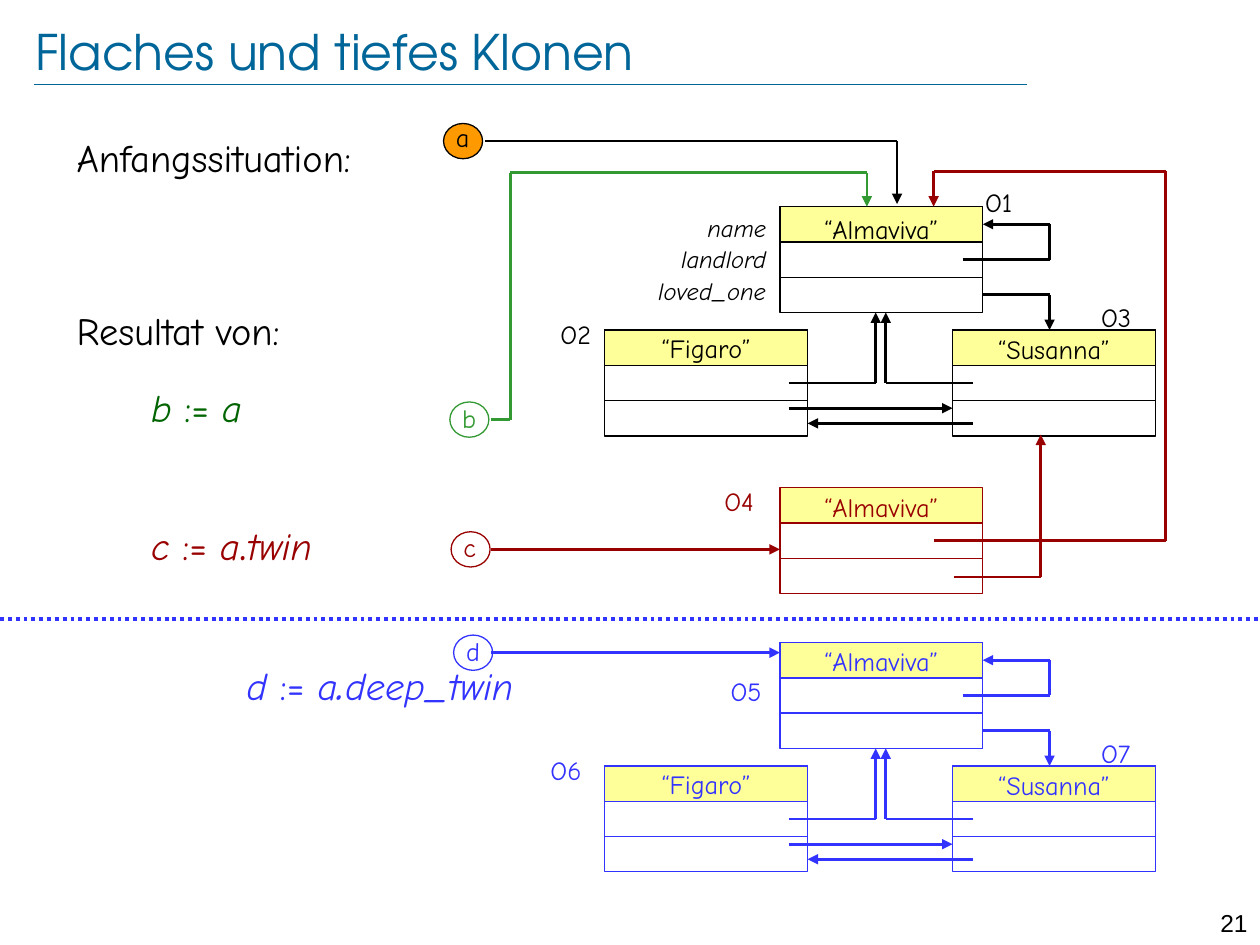
from dataclasses import dataclass
from itertools import pairwise

from lxml import etree
from pptx import Presentation
from pptx import util as u
from pptx.dml.color import RGBColor
from pptx.enum import dml, shapes, text
from pptx.oxml import ns


@dataclass(frozen=True)
class Theme:
    """Hold the colours, fonts and sizes of the slide."""
    black: str = "000000"
    blue: str = "3333FF"
    red: str = "990000"
    green: str = "339933"
    leaf: str = "006400"
    moss: str = "006600"
    teal: str = "006699"
    cream: str = "FFFF99"
    orange: str = "FF9900"
    hand: str = "Comic Neue"
    head: str = "TeX Gyre Adventor"
    plain: str = "Arial"
    title: int = 28
    body: int = 22
    dot: int = 28
    wide: int = 32
    label: int = 15
    small: int = 14
    thin: float = 0.75
    bold: float = 1.5


T = Theme()
ALIGN = text.PP_ALIGN


def style(run, color, size, font=T.hand, italic=False):
    """Set the font of one run."""
    run.font.name = font
    run.font.size = u.Pt(size)
    run.font.italic = italic
    run.font.color.rgb = RGBColor.from_string(color)


def frame(slide, x, y, w, h):
    """Add a wrapping text box and return its text frame."""
    box = slide.shapes.add_textbox(*map(u.Inches, (x, y, w, h)))
    box.text_frame.word_wrap = True
    return box.text_frame


def label(slide, words, x, y, w, color, size=T.label, align=ALIGN.LEFT,
          italic=False, font=T.hand):
    """Add a one-line text."""
    tf = frame(slide, x, y, w, 0.35)
    tf.text = words
    tf.paragraphs[0].alignment = align
    style(tf.paragraphs[0].runs[0], color, size, font, italic)
    return tf


def shape(slide, kind, x, y, w, h, fill=None, color=None):
    """Add a preset shape with an optional fill and outline."""
    item = slide.shapes.add_shape(kind, *map(u.Inches, (x, y, w, h)))
    item.shadow.inherit = False
    if fill:
        item.fill.solid()
        item.fill.fore_color.rgb = RGBColor.from_string(fill)
    else:
        item.fill.background()
    if color:
        item.line.color.rgb = RGBColor.from_string(color)
        item.line.width = u.Pt(T.thin)
    else:
        item.line.fill.background()


def line(slide, start, end, color, width=T.thin, arrow=False):
    """Add a straight line, with an arrowhead at its end if asked."""
    item = slide.shapes.add_connector(
        shapes.MSO_CONNECTOR.STRAIGHT, *map(u.Inches, (*start, *end)))
    item.line.color.rgb = RGBColor.from_string(color)
    item.line.width = u.Pt(width)
    if arrow:
        etree.SubElement(item.line._get_or_add_ln(), ns.qn("a:tailEnd"), type="triangle")
    etree.SubElement(item._element.spPr, ns.qn("a:effectLst"))
    return item


def wire(slide, color, *points, last=T.bold):
    """Join points by lines and end in an arrow."""
    legs = list(pairwise(points))
    for start, end in legs[:-1]:
        line(slide, start, end, color, T.bold)
    line(slide, *legs[-1], color, last, True)


def card(slide, name, x, y, color, lift=0.03, rim=True):
    """Draw an object with a name row and two fields."""
    w, row = 1.61, 0.28
    rect = shapes.MSO_SHAPE.RECTANGLE
    shape(slide, rect, x, y, w, row, T.cream, color if rim else None)
    shape(slide, rect, x, y, w, 3 * row, None, color)
    for k in (1, 2):
        line(slide, (x, y + k * row), (x + w, y + k * row), color)
    label(slide, name, x, y - lift, w, color, align=ALIGN.CENTER)


def ball(slide, name, x, y, color, fill=None, ink=None, lift=0.05):
    """Draw a variable as a lettered ellipse."""
    shape(slide, shapes.MSO_SHAPE.OVAL, x, y, 0.31, 0.28, fill, color)
    label(slide, name, x, y - lift, 0.38, ink or color)


def group(slide, y, color, tags, lift):
    """Draw the three linked objects whose first one starts at y."""
    low = y + 0.98
    card(slide, "“Almaviva”", 6.19, y, color, lift)
    card(slide, "“Figaro”", 4.8, low, color, 0.035)
    card(slide, "“Susanna”", 7.56, low, color, 0.025)
    for name, x, top in tags:
        label(slide, name, x, top, 0.54, color)
    mid, base = y + 0.42, low + 0.42
    wire(slide, color, (7.64, mid), (8.33, mid), (8.33, y + 0.14), (7.8, y + 0.14))
    wire(slide, color, (7.8, y + 0.7), (8.33, y + 0.7), (8.33, low))
    wire(slide, color, (6.26, base), (6.95, base), (6.95, y + 0.84))
    wire(slide, color, (7.72, base), (7.03, base), (7.03, y + 0.84))
    wire(slide, color, (6.26, low + 0.62), (7.56, low + 0.62))
    wire(slide, color, (7.72, low + 0.74), (6.41, low + 0.74))


def body(slide):
    """Write the situation and the three assignments."""
    rows = [
        (0, 0, [("Anfangssituation:", T.black, False, T.body)]),
        (0, 73, [("Resultat von:", T.black, False, T.body)]),
        (0.59, 18, [("b ", T.leaf, True, T.body), (":= ", T.moss, False, T.body),
                    ("a", T.leaf, True, T.body)]),
        (0.59, 54, [("c", T.red, True, T.body), (" := ", T.red, False, T.body),
                    ("a", T.red, True, T.body), (".", T.red, False, T.dot),
                    ("twin", T.red, True, T.body)]),
        (1.35, 55, [("d", T.blue, True, T.body), (" := ", T.blue, False, T.body),
                    ("a", T.blue, True, T.body), (".", T.blue, True, T.wide),
                    ("deep_twin", T.blue, True, T.body)]),
    ]
    tf = frame(slide, 0.51, 1.02, 9.21, 6.03)
    for k, (indent, gap, parts) in enumerate(rows):
        para = tf.add_paragraph() if k else tf.paragraphs[0]
        para._p.get_or_add_pPr().set("marL", str(u.Inches(indent)))
        para.line_spacing = u.Pt(26)
        if gap:
            para.space_before = u.Pt(gap)
        for words, color, italic, size in parts:
            run = para.add_run()
            run.text = words
            style(run, color, size, italic=italic)


def main():
    """Build the slide and save it."""
    deck = Presentation()
    deck.slide_width, deck.slide_height = u.Inches(10), u.Inches(7.5)
    slide = deck.slides.add_slide(deck.slide_layouts[6])

    line(slide, (0.27, 0.67), (8.15, 0.67), T.teal, 0.25)
    tf = label(slide, "Flaches und tiefes Klonen", 0.28, 0.23, 8.98, T.teal,
               T.title, font=T.head)
    tf.margin_left = tf.margin_right = tf.margin_top = tf.margin_bottom = 0
    tf.vertical_anchor = text.MSO_ANCHOR.MIDDLE
    label(slide, "21", 9.25, 7.16, 0.75, T.black, T.small, ALIGN.RIGHT, font=T.plain)
    body(slide)

    group(slide, 1.64, T.black,
          [("O1", 7.72, 1.43), ("O2", 4.35, 2.48), ("O3", 8.64, 2.34)], 0)
    for k, name in enumerate(("name", "landlord", "loved_one")):
        label(slide, name, 4.88, 1.64 + 0.25 * k, 1.3, T.black, T.small,
              ALIGN.RIGHT, True)
    ball(slide, "a", 3.52, 0.98, T.black, T.orange, lift=0.07)
    wire(slide, T.black, (3.85, 1.12), (7.12, 1.12), (7.12, 1.62))

    ball(slide, "b", 3.57, 3.19, T.green)
    wire(slide, T.green, (3.9, 3.33), (4.05, 3.33), (4.05, 1.37), (6.88, 1.37),
         (6.88, 1.64), last=T.thin)

    card(slide, "“Almaviva”", 6.19, 3.87, T.red, 0.02, False)
    label(slide, "O4", 5.65, 3.8, 0.54, T.red)
    ball(slide, "c", 3.58, 4.22, T.red)
    wire(slide, T.red, (3.9, 4.36), (6.19, 4.36))
    wire(slide, T.red, (7.57, 4.58), (8.26, 4.58), (8.26, 3.45))
    wire(slide, T.red, (7.41, 4.29), (9.25, 4.29), (9.25, 1.36), (7.41, 1.36),
         (7.41, 1.64))

    group(slide, 5.1, T.blue,
          [("O5", 5.7, 5.31), ("O6", 4.27, 5.94), ("O7", 8.64, 5.8)], 0.03)
    ball(slide, "d", 3.6, 5.04, T.blue)
    wire(slide, T.blue, (3.9, 5.18), (6.19, 5.18))
    rule = line(slide, (0, 4.91), (10, 4.91), T.blue, 2.25)
    rule.line.dash_style = dml.MSO_LINE.ROUND_DOT

    deck.save("out.pptx")


if __name__ == "__main__":
    main()
